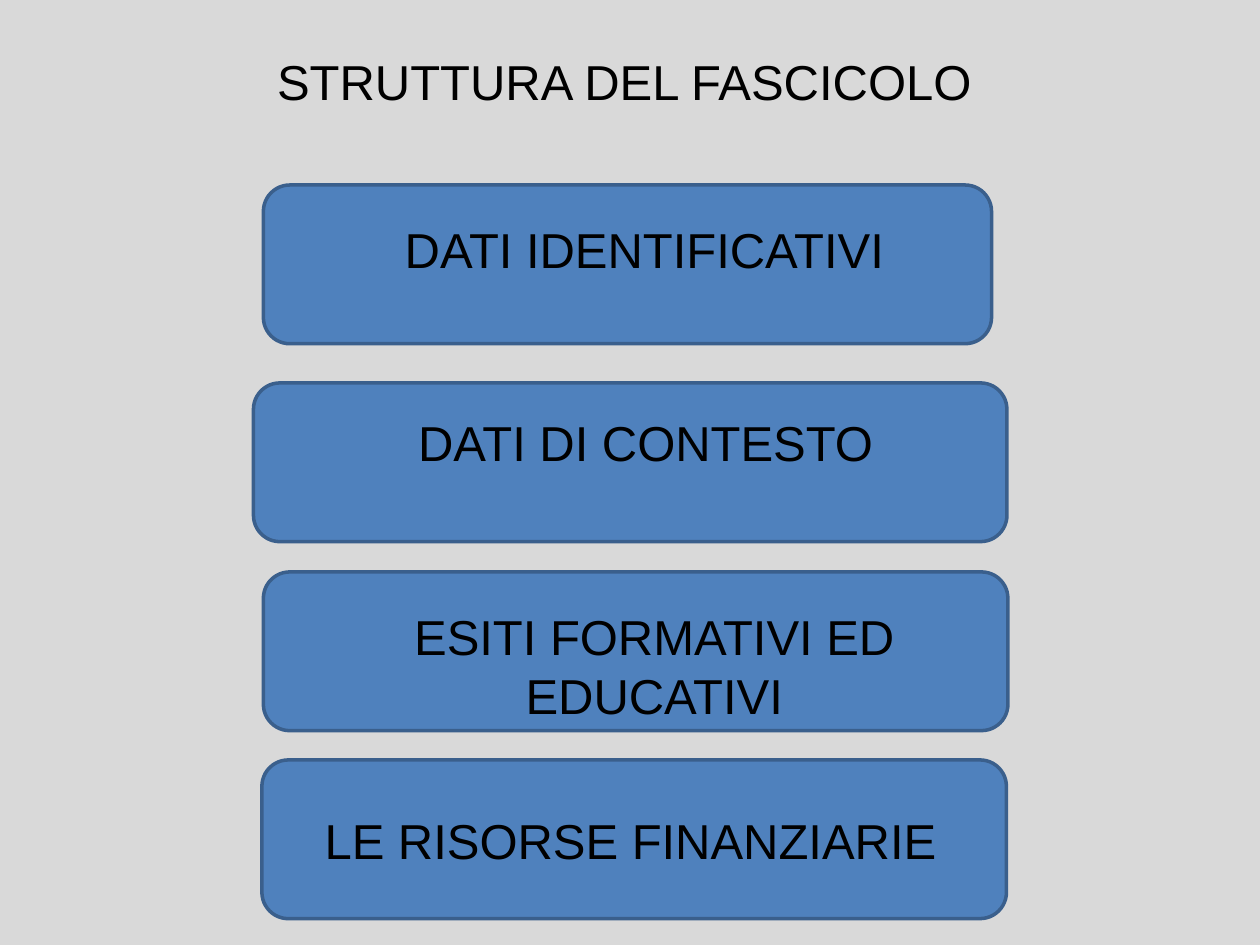
from pptx import Presentation
from pptx.dml.color import RGBColor
from pptx.enum.shapes import MSO_SHAPE
from pptx.enum.text import MSO_AUTO_SIZE, PP_ALIGN
from pptx.util import Cm, Pt

ROUNDED = MSO_SHAPE.ROUNDED_RECTANGLE
FIT_SHAPE = MSO_AUTO_SIZE.SHAPE_TO_FIT_TEXT
CENTER = PP_ALIGN.CENTER

GREY = RGBColor(0xD9, 0xD9, 0xD9)
BLUE = RGBColor(0x4F, 0x81, 0xBD)
DARK_BLUE = RGBColor(0x3A, 0x5F, 0x8C)
BLACK = RGBColor(0, 0, 0)

LINE_HEIGHT = 1.45
SECTION_HEIGHT = 3.2

SECTIONS = [
    ("DATI IDENTIFICATIVI", (5.31, 3.73, 14.68), (0.38, 0.58, 14.6)),
    ("DATI DI CONTESTO", (5.11, 7.72, 15.19), (0.41, 0.48, 14.99)),
    ("ESITI FORMATIVI ED EDUCATIVI", (5.31, 11.53, 15.01), (0.58, 0.58, 14.6)),
    ("LE RISORSE FINANZIARIE", (5.28, 15.32, 15.01), (0.13, 0.89, 14.6)),
]


def add_text(shapes, text, left, top, width, size=28, font="Arial", color=BLACK, align=CENTER):
    """Add a wrapped line of text that grows with its content."""
    label = shapes.add_textbox(Cm(left), Cm(top), Cm(width), Cm(LINE_HEIGHT))
    frame = label.text_frame
    frame.word_wrap = True
    frame.auto_size = FIT_SHAPE
    paragraph = frame.paragraphs[0]
    paragraph.alignment = align
    run = paragraph.add_run()
    run.text = text
    run.font.size = Pt(size)
    run.font.name = font
    run.font.color.rgb = color


def add_title(slide, left, top, width):
    """Add the slide title."""
    add_text(slide.shapes, "STRUTTURA DEL FASCICOLO", left, top, width)


def add_section(slide, text, box, label_box):
    """Group a rounded panel with its label, placed relative to the panel."""
    left, top, width = box
    dx, dy, label_width = label_box
    section = slide.shapes.add_group_shape()
    panel = section.shapes.add_shape(ROUNDED, Cm(left), Cm(top), Cm(width), Cm(SECTION_HEIGHT))
    panel.shadow.inherit = False
    panel.fill.solid()
    panel.fill.fore_color.rgb = BLUE
    panel.line.color.rgb = DARK_BLUE
    panel.line.width = Pt(2)
    add_text(section.shapes, text, left + dx, top + dy, label_width)


def main():
    """Build and save the slide."""
    deck = Presentation()
    deck.slide_width = Cm(25.4)
    deck.slide_height = Cm(19.05)
    slide = deck.slides.add_slide(deck.slide_layouts[6])
    slide.background.fill.solid()
    slide.background.fill.fore_color.rgb = GREY
    add_title(slide, 0.89, 0.91, 23.39)
    for text, box, label_box in SECTIONS:
        add_section(slide, text, box, label_box)
    deck.save("out.pptx")


if __name__ == "__main__":
    main()
